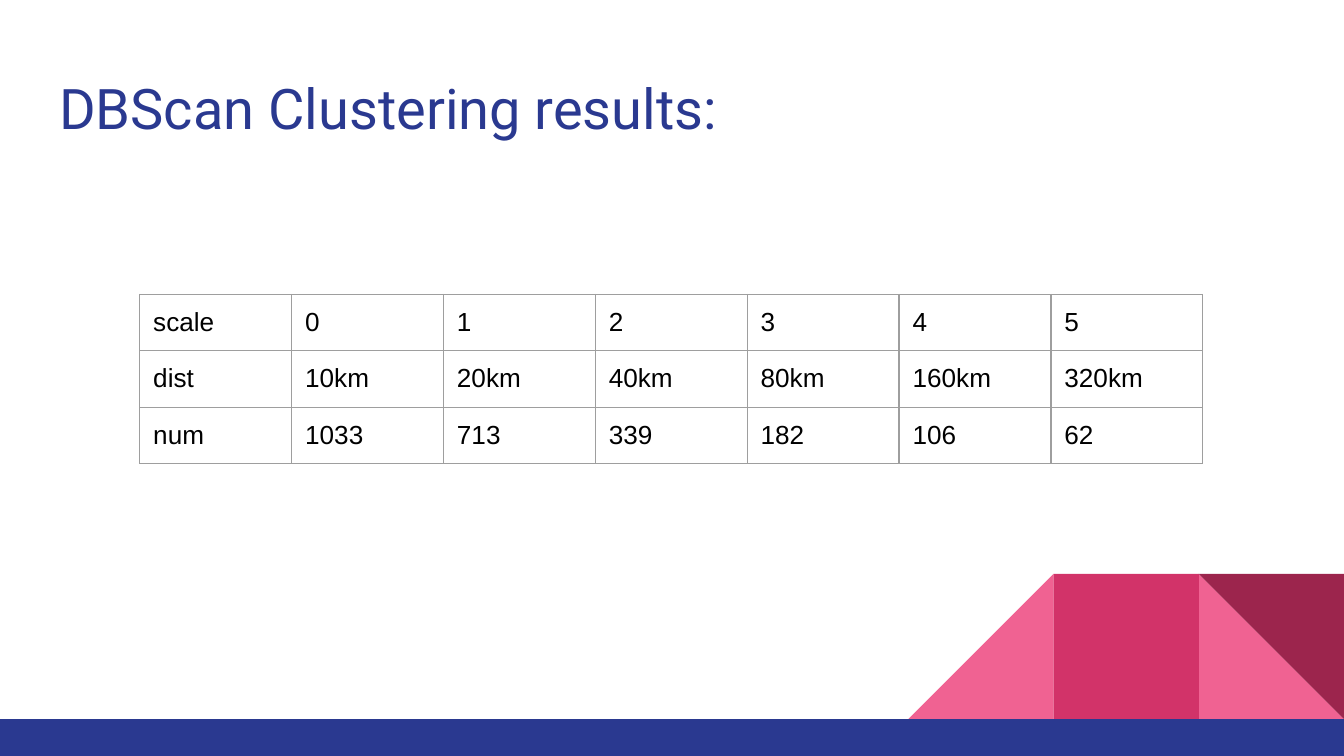
from dataclasses import dataclass

from lxml.etree import SubElement
from pptx import Presentation
from pptx.dml.color import RGBColor
from pptx.enum.shapes import MSO_SHAPE
from pptx.enum.text import MSO_ANCHOR, PP_ALIGN
from pptx.oxml.ns import qn
from pptx.slide import Slide
from pptx.table import _Cell
from pptx.text.text import TextFrame
from pptx.util import Inches, Pt


@dataclass(frozen=True)
class Theme:
    navy: str = "2A3990"
    pink: str = "F06292"
    rose: str = "D23369"
    wine: str = "9C254D"
    black: str = "000000"
    grey: str = "9E9E9E"
    head: str = "Roboto"
    body: str = "Arial"
    big: float = 30
    small: float = 14
    rule: float = 0.75


@dataclass(frozen=True)
class Block:
    kind: MSO_SHAPE
    left: float
    top: float
    width: float
    height: float
    color: str
    flip: bool = False
    turn: float = 0


THEME = Theme()
WIDE = 10
TALL = WIDE * 9 / 16
SIDE = 1.08
BASE = 5.35
PAD = Inches(0.1)
COL, ROW = 1.13, 0.42
DATA = [
    ["scale", "0", "1", "2", "3", "4", "5"],
    ["dist", "10km", "20km", "40km", "80km", "160km", "320km"],
    ["num", "1033", "713", "339", "182", "106", "62"],
]


def tile(kind: MSO_SHAPE, step: int, color: str,
         flip: bool = False, turn: float = 0) -> Block:
    return Block(kind, WIDE - step * SIDE, BASE - SIDE, SIDE, SIDE,
                 color, flip, turn)


BLOCKS = [
    tile(MSO_SHAPE.RIGHT_TRIANGLE, 1, THEME.pink),
    tile(MSO_SHAPE.RIGHT_TRIANGLE, 3, THEME.pink, flip=True),
    tile(MSO_SHAPE.RECTANGLE, 2, THEME.rose),
    tile(MSO_SHAPE.RIGHT_TRIANGLE, 1, THEME.wine, turn=180),
    Block(MSO_SHAPE.RECTANGLE, 0, BASE, WIDE, TALL - BASE, THEME.navy),
]


def draw(slide: Slide, block: Block) -> None:
    shape = slide.shapes.add_shape(
        block.kind, Inches(block.left), Inches(block.top),
        Inches(block.width), Inches(block.height))
    shape.shadow.inherit = False
    shape.fill.solid()
    shape.fill.fore_color.rgb = RGBColor.from_string(block.color)
    shape.line.fill.background()
    shape.rotation = block.turn
    if block.flip:
        shape._element.spPr.find(qn("a:xfrm")).set("flipH", "1")


def write(frame: TextFrame, text: str, font: str, size: float,
          color: str) -> None:
    para = frame.paragraphs[0]
    para.alignment = PP_ALIGN.LEFT
    run = para.add_run()
    run.text = text
    run.font.name = font
    run.font.size = Pt(size)
    run.font.color.rgb = RGBColor.from_string(color)


def edge(cell: _Cell) -> None:
    props = cell._tc.get_or_add_tcPr()
    for name in ("a:lnL", "a:lnR", "a:lnT", "a:lnB"):
        line = SubElement(props, qn(name), w=str(Pt(THEME.rule)))
        fill = SubElement(line, qn("a:solidFill"))
        SubElement(fill, qn("a:srgbClr"), val=THEME.grey)
    cell.fill.background()


def grid(slide: Slide, data: list[list[str]]) -> None:
    rows, cols = len(data), len(data[0])
    table = slide.shapes.add_table(
        rows, cols, Inches(1.04), Inches(2.19),
        Inches(COL * cols), Inches(ROW * rows)).table
    table.first_row = False
    table.horz_banding = False
    for col in table.columns:
        col.width = Inches(COL)
    for row, texts in zip(table.rows, data):
        row.height = Inches(ROW)
        for cell, text in zip(row.cells, texts):
            cell.margin_left = cell.margin_right = PAD
            cell.margin_top = cell.margin_bottom = PAD
            edge(cell)
            write(cell.text_frame, text, THEME.body, THEME.small, THEME.black)


def title(slide: Slide, text: str) -> None:
    shape = slide.shapes.title
    shape.left, shape.top = Inches(0.34), Inches(0.45)
    shape.width, shape.height = Inches(9.32), Inches(0.66)
    frame = shape.text_frame
    frame.word_wrap = True
    frame.vertical_anchor = MSO_ANCHOR.TOP
    frame.margin_left = frame.margin_right = PAD
    frame.margin_top = frame.margin_bottom = PAD
    write(frame, text, THEME.head, THEME.big, THEME.navy)


def main() -> None:
    deck = Presentation()
    deck.slide_width, deck.slide_height = Inches(WIDE), Inches(TALL)
    slide = deck.slides.add_slide(deck.slide_layouts[5])
    for block in BLOCKS:
        draw(slide, block)
    title(slide, "DBScan Clustering results:")
    grid(slide, DATA)
    deck.save("out.pptx")


if __name__ == "__main__":
    main()
